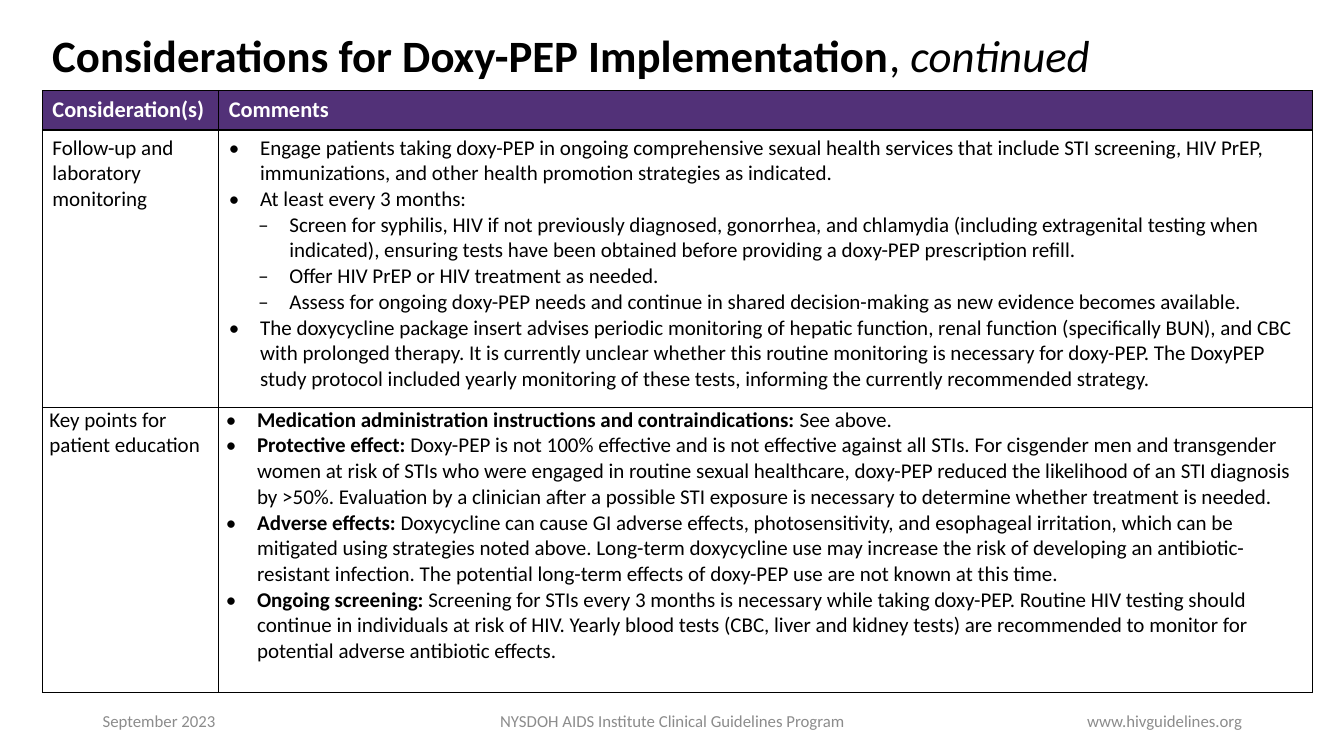
from dataclasses import dataclass

from lxml.etree import SubElement as Sub
from pptx import Presentation
from pptx.dml.color import RGBColor as Rgb
from pptx.enum.text import MSO_ANCHOR as Anchor, PP_ALIGN as Align
from pptx.oxml.ns import qn
from pptx.slide import Slide
from pptx.table import _Cell as Cell
from pptx.text.text import TextFrame, _Paragraph as Para
from pptx.util import Inches, Pt


@dataclass(frozen=True)
class Theme:
    font: str = "Calibri"
    black: str = "000000"
    white: str = "FFFFFF"
    gray: str = "8C8C8C"
    purple: str = "523178"
    title: int = 32
    head: int = 16
    body: int = 15
    foot: int = 12


@dataclass(frozen=True)
class Bit:
    text: str
    bold: bool = False
    slant: bool = False


@dataclass(frozen=True)
class Item:
    bits: tuple[Bit, ...]
    mark: str = ""
    level: int = 0


@dataclass(frozen=True)
class Foot:
    text: str
    left: float
    width: float
    align: Align


THEME = Theme()


def point(text: str, lead: str = "") -> Item:
    bits = (Bit(lead, bold=True), Bit(text)) if lead else (Bit(text),)
    return Item(bits, "•")


def dash(text: str) -> Item:
    return Item((Bit(text),), "‒", 1)


def plain(text: str, bold: bool = False) -> Item:
    return Item((Bit(text, bold),))


TITLE = Item((
    Bit("Considerations for Doxy-PEP Implementation", bold=True),
    Bit(","),
    Bit(" continued", slant=True),
))

FEET = [
    Foot("September 2023", 0.92, 3, Align.LEFT),
    Foot("NYSDOH AIDS Institute Clinical Guidelines Program", 4.42, 4.5, Align.CENTER),
    Foot("www.hivguidelines.org", 9.42, 3, Align.RIGHT),
]

FOLLOW = [
    point("Engage patients taking doxy-PEP in ongoing comprehensive sexual health services that "
          "include STI screening, HIV PrEP, immunizations, and other health promotion strategies "
          "as indicated."),
    point("At least every 3 months:"),
    dash("Screen for syphilis, HIV if not previously diagnosed, gonorrhea, and chlamydia "
         "(including extragenital testing when indicated), ensuring tests have been obtained "
         "before providing a doxy-PEP prescription refill."),
    dash("Offer HIV PrEP or HIV treatment as needed."),
    dash("Assess for ongoing doxy-PEP needs and continue in shared decision-making as new "
         "evidence becomes available."),
    point("The doxycycline package insert advises periodic monitoring of hepatic function, renal "
          "function (specifically BUN), and CBC with prolonged therapy. It is currently unclear "
          "whether this routine monitoring is necessary for doxy-PEP. The DoxyPEP study protocol "
          "included yearly monitoring of these tests, informing the currently recommended "
          "strategy."),
]

TEACH = [
    point(" See above.", "Medication administration instructions and contraindications:"),
    point(" Doxy-PEP is not 100% effective and is not effective against all STIs. For cisgender "
          "men and transgender women at risk of STIs who were engaged in routine sexual "
          "healthcare, doxy-PEP reduced the likelihood of an STI diagnosis by >50%. Evaluation by "
          "a clinician after a possible STI exposure is necessary to determine whether treatment "
          "is needed.", "Protective effect:"),
    point(" Doxycycline can cause GI adverse effects, photosensitivity, and esophageal "
          "irritation, which can be mitigated using strategies noted above. Long-term doxycycline "
          "use may increase the risk of developing an antibiotic-resistant infection. The "
          "potential long-term effects of doxy-PEP use are not known at this time.",
          "Adverse effects:"),
    point(" Screening for STIs every 3 months is necessary while taking doxy-PEP. Routine HIV "
          "testing should continue in individuals at risk of HIV. Yearly blood tests (CBC, liver "
          "and kidney tests) are recommended to monitor for potential adverse antibiotic effects.",
          "Ongoing screening:"),
]

ROWS = [
    [[plain("Consideration(s)", True)], [plain("Comments", True)]],
    [[plain("Follow-up and laboratory monitoring")], FOLLOW],
    [[plain("Key points for patient education")], TEACH],
]
WIDTHS = [1.75, 10.85]
HEIGHTS = [0.39, 2.75, 2.83]


def bullet(para: Para, item: Item) -> None:
    para.level = item.level
    props = para._p.get_or_add_pPr()
    props.set("marL", str(Inches(0.6 if item.level else 0.31)))
    props.set("indent", str(Inches(-0.31)))
    Sub(props, qn("a:buFont"), typeface=THEME.font)
    Sub(props, qn("a:buChar"), char=item.mark)


def write(frame: TextFrame, items: list[Item], size: int, color: str) -> None:
    for i, item in enumerate(items):
        para = frame.add_paragraph() if i else frame.paragraphs[0]
        if item.mark:
            bullet(para, item)
        for bit in item.bits:
            run = para.add_run()
            run.text = bit.text
            font = run.font
            font.name, font.size = THEME.font, Pt(size)
            font.bold, font.italic = bit.bold, bit.slant
            font.color.rgb = Rgb.from_string(color)


def label(slide: Slide, box: tuple[float, float, float, float], item: Item,
          size: int, color: str, align: Align = Align.LEFT) -> Para:
    frame = slide.shapes.add_textbox(*map(Inches, box)).text_frame
    frame.word_wrap = True
    frame.vertical_anchor = Anchor.MIDDLE
    write(frame, [item], size, color)
    para = frame.paragraphs[0]
    para.alignment = align
    return para


def border(cell: Cell) -> None:
    props = cell._tc.get_or_add_tcPr()
    for side in ("lnL", "lnR", "lnT", "lnB"):
        line = Sub(props, qn(f"a:{side}"), w=str(Pt(1)))
        fill = Sub(line, qn("a:solidFill"))
        Sub(fill, qn("a:srgbClr"), val=THEME.black)


def grid(slide: Slide) -> None:
    box = map(Inches, (0.42, 0.9, sum(WIDTHS), sum(HEIGHTS)))
    table = slide.shapes.add_table(len(ROWS), len(WIDTHS), *box).table
    for col, width in zip(table.columns, WIDTHS):
        col.width = Inches(width)
    for r, (row, height) in enumerate(zip(ROWS, HEIGHTS)):
        table.rows[r].height = Inches(height)
        head, last = r == 0, r == len(ROWS) - 1
        for c, items in enumerate(row):
            cell = table.cell(r, c)
            border(cell)
            cell.fill.solid()
            cell.fill.fore_color.rgb = Rgb.from_string(THEME.purple if head else THEME.white)
            if last:
                cell.margin_left = cell.margin_right = Inches(0.07)
                cell.margin_top = cell.margin_bottom = 0
            write(cell.text_frame, items, THEME.head if head else THEME.body,
                  THEME.white if head else THEME.black)


def main() -> None:
    deck = Presentation()
    deck.slide_width, deck.slide_height = Inches(13.33), Inches(7.5)
    slide = deck.slides.add_slide(deck.slide_layouts[6])
    title = label(slide, (0.42, 0.15, 12, 0.86), TITLE, THEME.title, THEME.black)
    title.line_spacing = 0.9
    for foot in FEET:
        label(slide, (foot.left, 6.95, foot.width, 0.4), plain(foot.text),
              THEME.foot, THEME.gray, foot.align)
    grid(slide)
    deck.save("out.pptx")


if __name__ == "__main__":
    main()
